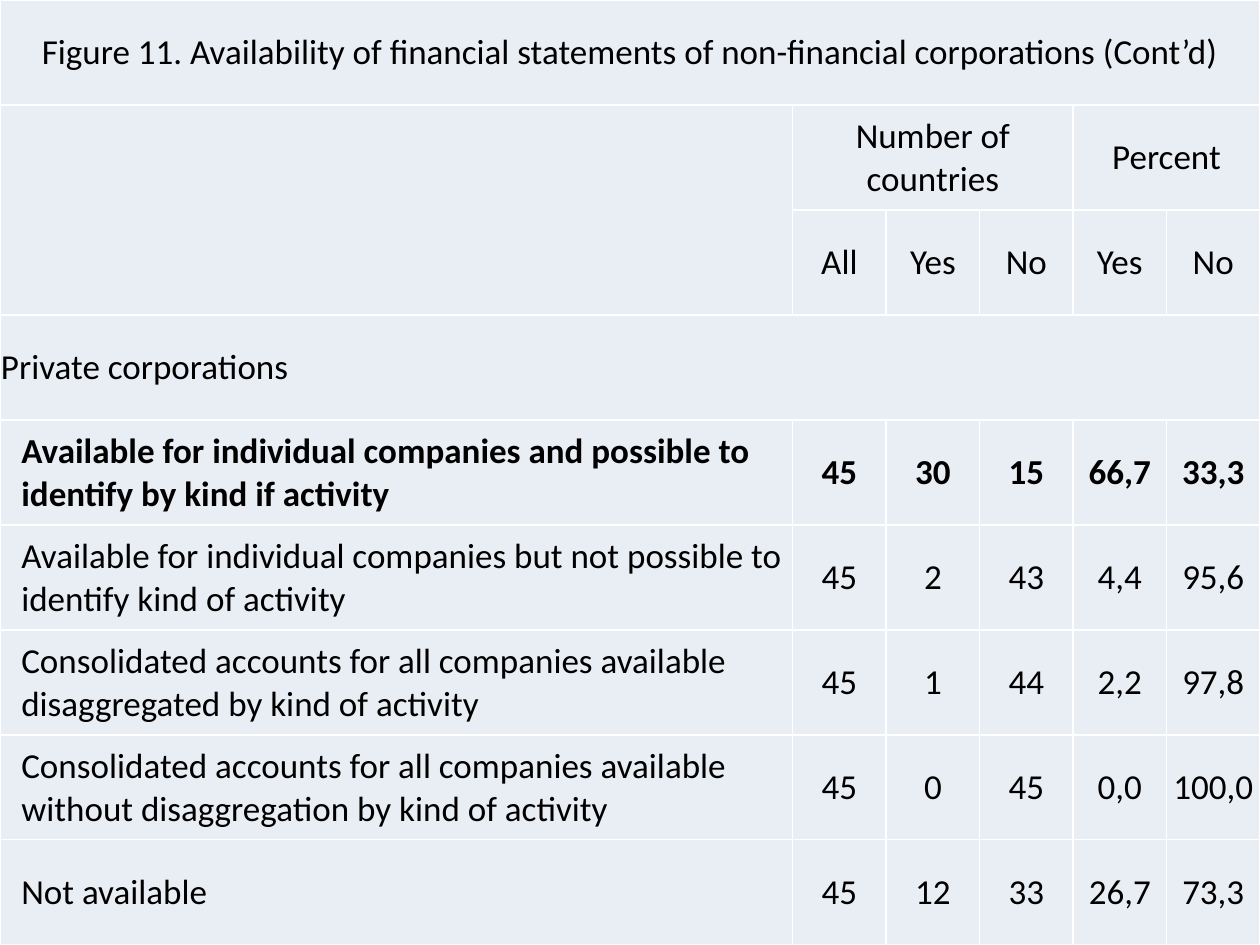
from dataclasses import dataclass

from lxml.etree import SubElement
from pptx import Presentation
from pptx.dml.color import RGBColor
from pptx.enum.text import MSO_ANCHOR, PP_ALIGN
from pptx.oxml.ns import qn
from pptx.util import Cm, Pt

# Content: None marks a place covered by a merged cell
TITLE = "Figure 11. Availability of financial statements of non-financial corporations (Cont’d)"
ROWS = [
    (TITLE, None, None, None, None, None),
    (None, "Number of countries", None, None, "Percent", None),
    (None, "All", "Yes", "No", "Yes", "No"),
    ("Private corporations", None, None, None, None, None),
    ("Available for individual companies and possible to identify by kind if activity",
     "45", "30", "15", "66,7", "33,3"),
    ("Available for individual companies but not possible to identify kind of activity",
     "45", "2", "43", "4,4", "95,6"),
    ("Consolidated accounts for all companies available disaggregated by kind of activity",
     "45", "1", "44", "2,2", "97,8"),
    ("Consolidated accounts for all companies available without disaggregation by kind of activity",
     "45", "0", "45", "0,0", "100,0"),
    ("Not available", "45", "12", "33", "26,7", "73,3"),
]
# First and last cell of each merged area, as (row, column)
MERGES = [((0, 0), (0, 5)), ((1, 0), (2, 0)), ((1, 1), (1, 3)),
          ((1, 4), (1, 5)), ((3, 0), (3, 5))]
SECTION_ROW = 3
BOLD_ROW = 4


@dataclass(frozen=True)
class Theme:
    font: str = "Calibri"
    size: int = 20
    text: str = "000000"
    fill: str = "E9EDF4"
    border: str = "FFFFFF"
    border_width: int = 1


THEME = Theme()
WIDTH, HEIGHT = Cm(25.4), Cm(19.05)
LABEL_WIDTH = Cm(15.98)
INSET, INDENT = Cm(0.02), Cm(0.43)


def style_cell(cell):
    """Set the margins, borders and fill of a cell."""
    cell.vertical_anchor = MSO_ANCHOR.MIDDLE
    cell.margin_left = cell.margin_right = cell.margin_top = INSET
    cell.margin_bottom = 0
    properties = cell._tc.get_or_add_tcPr()
    for side in ("a:lnL", "a:lnR", "a:lnT", "a:lnB"):
        line = SubElement(properties, qn(side), w=str(Pt(THEME.border_width)))
        solid = SubElement(line, qn("a:solidFill"))
        SubElement(solid, qn("a:srgbClr"), val=THEME.border)
    cell.fill.solid()
    cell.fill.fore_color.rgb = RGBColor.from_string(THEME.fill)


def write_cell(cell, text, align, bold):
    """Write the text of a cell as one run."""
    para = cell.text_frame.paragraphs[0]
    para.alignment = align
    span = para.add_run()
    span.text = text
    span.font.name = THEME.font
    span.font.size = Pt(THEME.size)
    span.font.bold = bold
    span.font.color.rgb = RGBColor.from_string(THEME.text)


def main():
    deck = Presentation()
    deck.slide_width, deck.slide_height = WIDTH, HEIGHT
    page = deck.slides.add_slide(deck.slide_layouts[6])

    # Table grid: one wide label column, equal value columns and rows
    column_count = len(ROWS[0])
    table = page.shapes.add_table(len(ROWS), column_count, 0, 0, WIDTH, HEIGHT).table
    table.first_row = table.horz_banding = False
    table.columns[0].width = LABEL_WIDTH
    for column in range(1, column_count):
        table.columns[column].width = (WIDTH - LABEL_WIDTH) // (column_count - 1)

    # Cells
    for row, texts in enumerate(ROWS):
        for column, text in enumerate(texts):
            cell = table.cell(row, column)
            style_cell(cell)
            is_label = column == 0 and row >= SECTION_ROW
            if is_label and row > SECTION_ROW:
                cell.margin_left = INDENT
            if text is not None:
                align = PP_ALIGN.LEFT if is_label else PP_ALIGN.CENTER
                write_cell(cell, text, align, row == BOLD_ROW)

    # Merged areas
    for first, last in MERGES:
        table.cell(*first).merge(table.cell(*last))

    deck.save("out.pptx")


if __name__ == "__main__":
    main()
